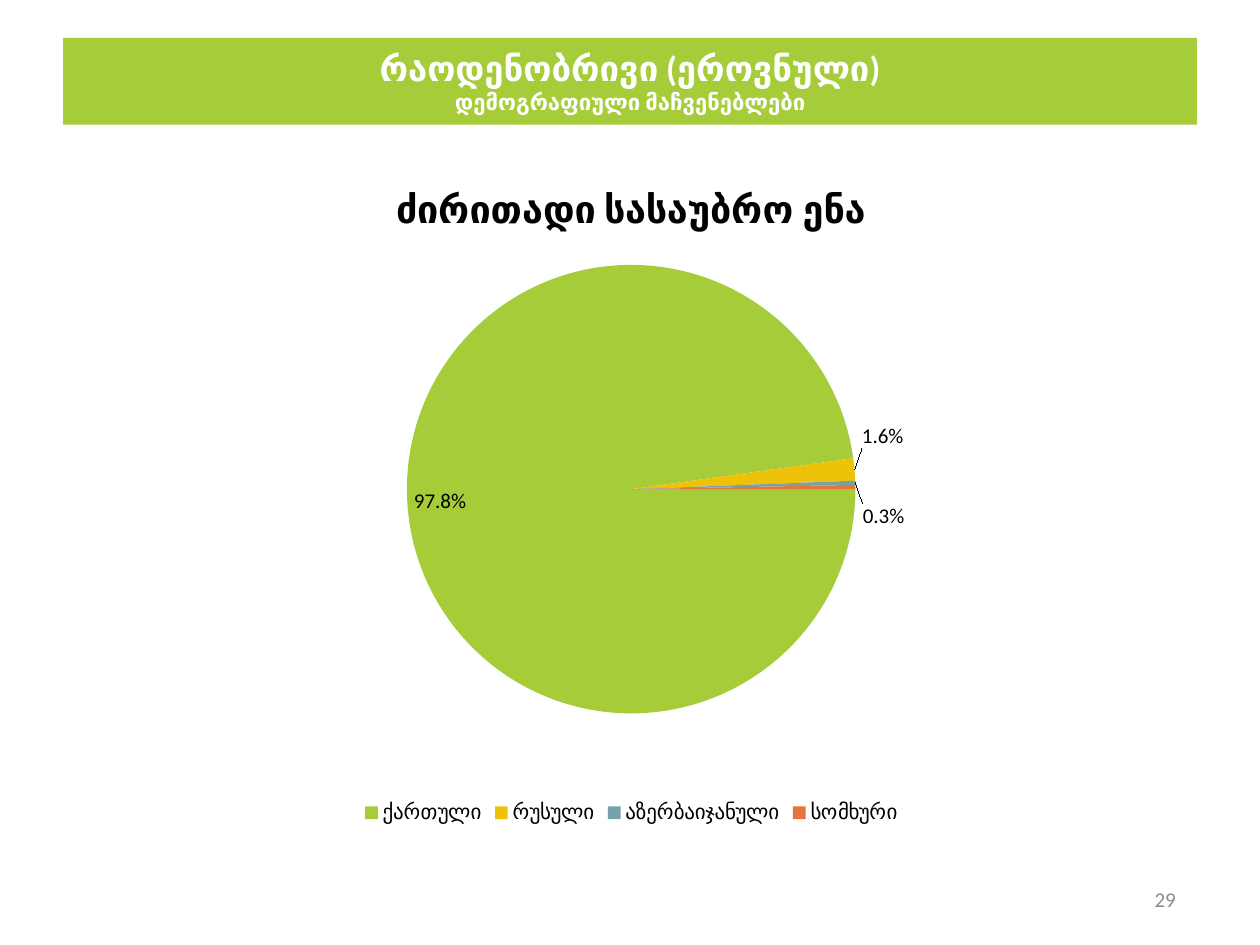
from pptx import Presentation
from pptx.chart.data import CategoryChartData
from pptx.dml.color import RGBColor
from pptx.enum.chart import XL_CHART_TYPE, XL_LABEL_POSITION, XL_LEGEND_POSITION
from pptx.enum.text import MSO_ANCHOR, PP_ALIGN
from pptx.oxml import parse_xml
from pptx.oxml.ns import nsdecls
from pptx.util import Inches, Pt

PIE = XL_CHART_TYPE.PIE
BEST_FIT = XL_LABEL_POSITION.BEST_FIT
BOTTOM = XL_LEGEND_POSITION.BOTTOM
MIDDLE = MSO_ANCHOR.MIDDLE
CENTER, RIGHT = PP_ALIGN.CENTER, PP_ALIGN.RIGHT

GREEN = RGBColor(0xA6, 0xCD, 0x39)
YELLOW = RGBColor(0xED, 0xC2, 0x09)
BLUE = RGBColor(0x76, 0xA2, 0xAB)
ORANGE = RGBColor(0xE5, 0x75, 0x3A)
WHITE = RGBColor(0xFF, 0xFF, 0xFF)
BLACK = RGBColor(0, 0, 0)
GRAY = RGBColor(0x8C, 0x8C, 0x8C)

FONT = "Calibri"
LANGUAGES = [
    ("ქართული", 97.8, GREEN),
    ("რუსული", 1.6, YELLOW),
    ("აზერბაიჯანული", 0.3, BLUE),
    ("სომხური", 0.3, ORANGE),
]


def style_font(font, size, color, bold=False):
    """Set face, size, colour and weight of a font."""
    font.name = FONT
    font.size = Pt(size)
    font.color.rgb = color
    font.bold = bold


def place(shape, left, top, width, height):
    """Position a shape, in inches."""
    shape.left, shape.top = Inches(left), Inches(top)
    shape.width, shape.height = Inches(width), Inches(height)


def fill_title(title, heading, subheading):
    """Write the two-line title on its green band."""
    place(title, 0.5, 0.3, 9, 0.69)
    title.fill.solid()
    title.fill.fore_color.rgb = GREEN
    frame = title.text_frame
    frame.vertical_anchor = MIDDLE
    para = frame.paragraphs[0]
    para.alignment = CENTER
    style_font(para.font, 19.8, WHITE, True)
    para.add_run().text = heading
    para.add_line_break()
    span = para.add_run()
    span.text = subheading
    span.font.size = Pt(12.6)


def add_page_number(page, number):
    """Add the page number at the lower right."""
    box = page.shapes.add_textbox(Inches(9.02), Inches(6.94), Inches(0.41), Inches(0.4))
    frame = box.text_frame
    frame.word_wrap = True
    frame.vertical_anchor = MIDDLE
    para = frame.paragraphs[0]
    para.text = number
    para.alignment = RIGHT
    style_font(para.font, 12, GRAY)


def layout_xml(mode, **values):
    """Return a manual chart layout as XML text."""
    parts = "".join(f'<c:{name} val="{value}"/>' for name, value in values.items())
    return f"<c:layout {nsdecls('c')}><c:manualLayout>{mode}{parts}</c:manualLayout></c:layout>"


def moved_label(index, shift):
    """Return a percentage label moved vertically by a share of the chart height."""
    return parse_xml(
        f'<c:dLbl {nsdecls("c")}><c:idx val="{index}"/>{layout_xml("", x=0, y=shift)}'
        '<c:numFmt formatCode="0.0%" sourceLinked="0"/><c:dLblPos val="outEnd"/>'
        '<c:showLegendKey val="0"/><c:showVal val="0"/><c:showCatName val="0"/>'
        '<c:showSerName val="0"/><c:showPercent val="1"/><c:showBubbleSize val="0"/></c:dLbl>'
    )


def hidden_label(index):
    """Return a label entry that hides one slice's label."""
    return parse_xml(
        f'<c:dLbl {nsdecls("c")}><c:idx val="{index}"/><c:delete val="1"/></c:dLbl>'
    )


def label_slices(series):
    """Show percentages, spreading the labels of the thin slices."""
    labels = series.data_labels
    labels.show_percentage = True
    labels.show_value = False
    labels.number_format = "0.0%"
    labels.number_format_is_linked = False
    labels.position = BEST_FIT
    style_font(labels.font, 12, BLACK)
    entries = [moved_label(1, -0.03), moved_label(2, 0.05), hidden_label(3)]
    for position, entry in enumerate(entries):
        series._element.dLbls.insert(position, entry)


def add_language_pie(page, heading):
    """Add the pie chart of main languages."""
    names, shares, colors = zip(*LANGUAGES)
    data = CategoryChartData()
    data.categories = names
    data.add_series("Series 1", shares)
    chart = page.shapes.add_chart(
        PIE, Inches(0.56), Inches(1.23), Inches(8.9), Inches(5.36), data
    ).chart
    style_font(chart.font, 18, BLACK)
    chart.has_title = True
    para = chart.chart_title.text_frame.paragraphs[0]
    para.text = heading
    style_font(para.font, 21.6, BLACK, True)
    chart.has_legend = True
    chart.legend.position = BOTTOM
    chart.legend.include_in_layout = False
    style_font(chart.legend.font, 12, BLACK)

    plot = chart.plots[0]
    plot.vary_by_categories = True
    series = plot.series[0]
    for index, color in enumerate(colors):
        fill = series.points[index].format.fill
        fill.solid()
        fill.fore_color.rgb = color
    label_slices(series)

    pie = plot._element
    for angle in pie.xpath("c:firstSliceAng"):
        pie.remove(angle)
    pie.append(parse_xml(f'<c:firstSliceAng {nsdecls("c")} val="90"/>'))
    area = pie.getparent()
    for layout in area.xpath("c:layout"):
        area.remove(layout)
    inner = '<c:layoutTarget val="inner"/><c:xMode val="edge"/><c:yMode val="edge"/>'
    area.insert(0, parse_xml(layout_xml(inner, x=0.3, y=0.11, w=0.4, h=0.77)))


def main():
    """Build and save the slide."""
    deck = Presentation()
    deck.slide_width, deck.slide_height = Inches(10), Inches(7.5)
    page = deck.slides.add_slide(deck.slide_layouts[5])
    fill_title(page.shapes.title, "რაოდენობრივი (ეროვნული)", "დემოგრაფიული მაჩვენებლები")
    add_page_number(page, "29")
    add_language_pie(page, "ძირითადი სასაუბრო ენა")
    deck.save("out.pptx")


if __name__ == "__main__":
    main()
